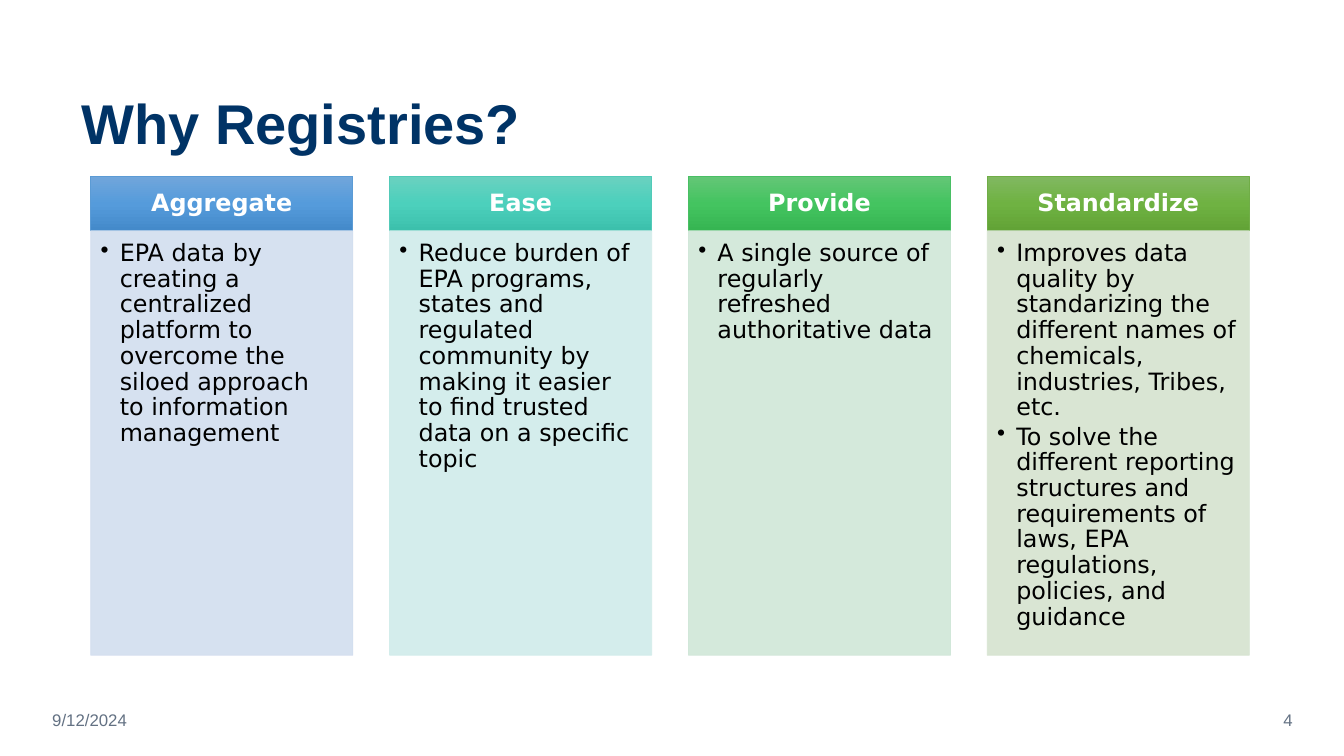
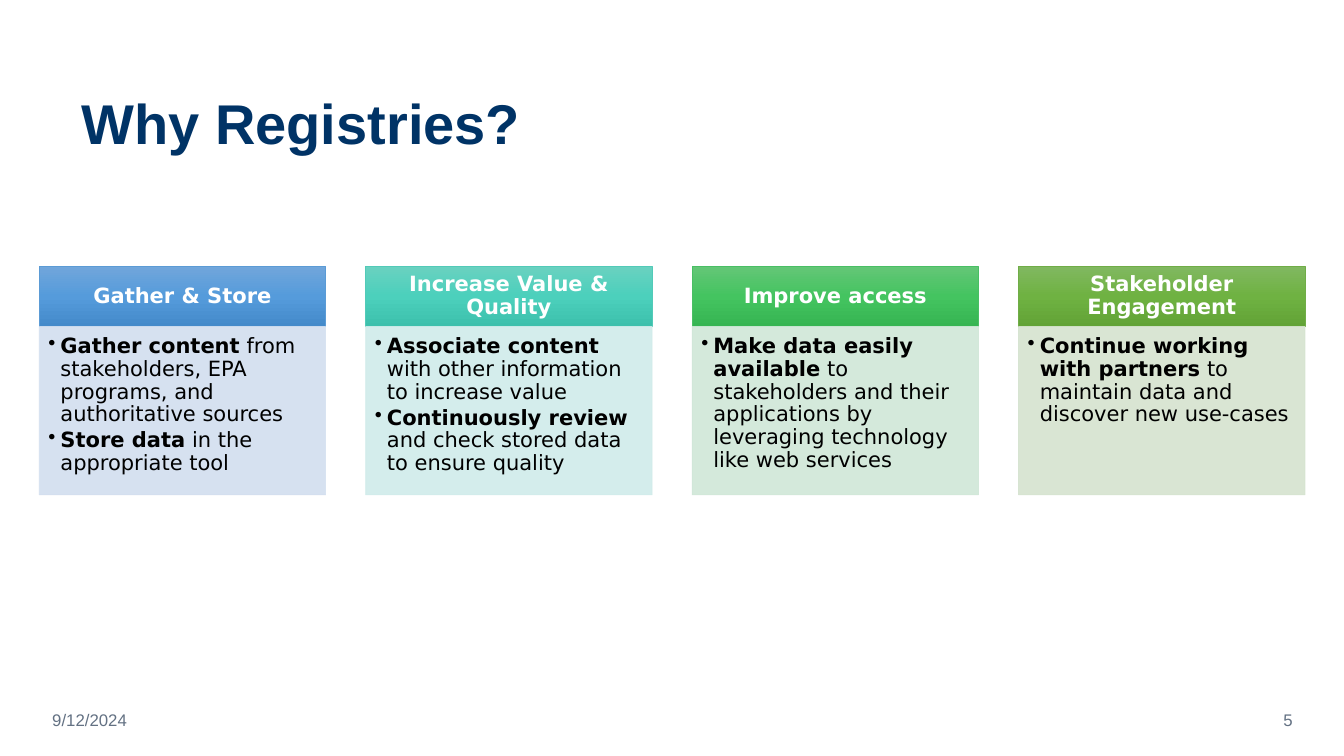
from copy import deepcopy

from lxml.etree import SubElement
from pptx import Presentation
from pptx.dml.color import RGBColor
from pptx.enum.shapes import MSO_SHAPE
from pptx.enum.text import MSO_ANCHOR, PP_ALIGN
from pptx.oxml.ns import qn
from pptx.util import Inches, Pt

WHITE = RGBColor(0xFF, 0xFF, 0xFF)
BLACK = RGBColor(0x00, 0x00, 0x00)
NAVY = RGBColor(0x00, 0x33, 0x66)
SLATE = RGBColor(0x63, 0x71, 0x83)

TITLE_FONT = "Arial"
COLUMN_FONT = "DejaVu Sans"
TITLE = "Why Registries?"
DATE = "9/12/2024"

# Per column: header gradient from top to bottom, header outline, body fill
COLUMN_COLOURS = [
    [RGBColor.from_string(code) for code in codes.split()]
    for codes in (
        "71A6DB 559BDB 448ACA 5B9BD5 D2DEEF",
        "6AD1C0 4CD0BC 3CC0AC 52CAB8 D0ECEA",
        "64C677 44C460 36B552 49BF64 D0E7D8",
        "81B861 6FB242 62A336 70AD47 D5E3CF",
    )
]
BODY_OPACITY = 90
PITCH_TO_WIDTH = 1.14

# Each bullet is a pair: bold lead, plain remainder
SLIDES = [
    {
        "number": 4,
        "left": 0.9, "top": 1.75, "width": 2.6,
        "header_height": 0.54, "body_height": 4.21,
        "size": 17, "indent": 0.19,
        "header_insets": (0.13, 0.08, 0.13, 0.08),
        "body_insets": (0.1, 0.1, 0.13, 0.15),
        "columns": [
            ("Aggregate", [
                ("", "EPA data by creating a centralized platform to overcome "
                     "the siloed approach to information management"),
            ]),
            ("Ease", [
                ("", "Reduce burden of EPA programs, states and regulated community "
                     "by making it easier to find trusted data on a specific topic"),
            ]),
            ("Provide", [
                ("", "A single source of regularly refreshed authoritative data"),
            ]),
            ("Standardize", [
                ("", "Improves data quality by standarizing the different names of "
                     "chemicals, industries, Tribes, etc."),
                ("", "To solve the different reporting structures and requirements of "
                     "laws, EPA regulations, policies, and guidance"),
            ]),
        ],
    },
    {
        "number": 5,
        "left": 0.39, "top": 2.64, "width": 2.84,
        "header_height": 0.6, "body_height": 1.67,
        "size": 15, "indent": 0.12,
        "header_insets": (0.12, 0.07, 0.12, 0.07),
        "body_insets": (0.09, 0.09, 0.12, 0.13),
        "columns": [
            ("Gather & Store", [
                ("Gather content", " from stakeholders, EPA programs, "
                                   "and authoritative sources"),
                ("Store data", " in the appropriate tool"),
            ]),
            ("Increase Value & Quality", [
                ("Associate content", " with other information to increase value"),
                ("Continuously review", " and check stored data to ensure quality"),
            ]),
            ("Improve access", [
                ("Make data easily available",
                 " to stakeholders and their applications by leveraging "
                 "technology like web services"),
            ]),
            ("Stakeholder Engagement", [
                ("Continue working with partners",
                 " to maintain data and discover new use-cases"),
            ]),
        ],
    },
]


def set_values(target, values):
    for name, value in values.items():
        setattr(target, name, value)


def set_frame(shape, anchor, insets=(0.1, 0.05, 0.1, 0.05)):
    sides = ("margin_left", "margin_top", "margin_right", "margin_bottom")
    frame = shape.text_frame
    set_values(frame, {"word_wrap": True, "vertical_anchor": anchor})
    set_values(frame, dict(zip(sides, map(Inches, insets))))
    return frame


def add_run(paragraph, text, font, size, colour, bold=False):
    run = paragraph.add_run()
    run.text = text
    set_values(run.font, {"name": font, "size": Pt(size), "bold": bold})
    run.font.color.rgb = colour


def add_label(slide, box, text, size, colour, anchor=MSO_ANCHOR.MIDDLE,
              align=PP_ALIGN.LEFT, bold=False, **frame_options):
    label = slide.shapes.add_textbox(*map(Inches, box))
    paragraph = set_frame(label, anchor, **frame_options).paragraphs[0]
    set_values(paragraph, {"alignment": align, "line_spacing": 0.9})
    add_run(paragraph, text, TITLE_FONT, size, colour, bold)


def add_rectangle(slide, box, line_colour):
    shape = slide.shapes.add_shape(MSO_SHAPE.RECTANGLE, *map(Inches, box))
    shape.shadow.inherit = False
    shape.line.color.rgb = line_colour
    shape.line.width = Pt(0.5)
    return shape


def fill_gradient(shape, colours):
    """Fill from top to bottom with three evenly spaced colours."""
    shape.fill.gradient()
    shape.fill.gradient_angle = 270
    stop_list = next(shape.element.iter(qn("a:gsLst")))
    stop_list.insert(1, deepcopy(stop_list[0]))
    for stop, position, colour in zip(shape.fill.gradient_stops, (0, 0.5, 1), colours):
        stop.position = position
        stop.color.rgb = colour


def add_header(slide, box, text, colours, layout):
    *gradient, outline, _ = colours
    header = add_rectangle(slide, box, outline)
    fill_gradient(header, gradient)
    frame = set_frame(header, MSO_ANCHOR.MIDDLE, layout["header_insets"])
    paragraph = frame.paragraphs[0]
    set_values(paragraph, {"alignment": PP_ALIGN.CENTER, "line_spacing": 0.9})
    add_run(paragraph, text, COLUMN_FONT, layout["size"], WHITE, bold=True)


def add_bullet(paragraph, indent):
    properties = paragraph._p.get_or_add_pPr()
    properties.set("marL", str(Inches(indent)))
    properties.set("indent", str(-Inches(indent)))
    SubElement(properties, qn("a:buChar"), char="•")


def add_body(slide, box, bullets, colour, layout):
    body = add_rectangle(slide, box, colour)
    body.fill.solid()
    body.fill.fore_color.rgb = colour
    for colour_element in body.element.spPr.iter(qn("a:srgbClr")):
        SubElement(colour_element, qn("a:alpha"), val=str(BODY_OPACITY * 1000))
    frame = set_frame(body, MSO_ANCHOR.TOP, layout["body_insets"])
    size = layout["size"]
    for index, (lead, remainder) in enumerate(bullets):
        paragraph = frame.add_paragraph() if index else frame.paragraphs[0]
        set_values(paragraph, {
            "alignment": PP_ALIGN.LEFT,
            "line_spacing": 0.9,
            "space_after": Pt(0.15 * size),
        })
        add_bullet(paragraph, layout["indent"])
        if lead:
            add_run(paragraph, lead, COLUMN_FONT, size, BLACK, bold=True)
        add_run(paragraph, remainder, COLUMN_FONT, size, BLACK)


def add_columns(slide, layout):
    top, width = layout["top"], layout["width"]
    header_height = layout["header_height"]
    for index, (heading, bullets) in enumerate(layout["columns"]):
        colours = COLUMN_COLOURS[index]
        left = layout["left"] + index * width * PITCH_TO_WIDTH
        add_header(slide, (left, top, width, header_height), heading, colours, layout)
        body_box = (left, top + header_height, width, layout["body_height"])
        add_body(slide, body_box, bullets, colours[-1], layout)


def add_title_and_footer(slide, number):
    add_label(slide, (0.81, 0.15, 11.68, 1.45), TITLE, 40, NAVY,
              anchor=MSO_ANCHOR.BOTTOM, bold=True, insets=(0, 0.05, 0.1, 0.05))
    add_label(slide, (0.42, 6.95, 3, 0.4), DATE, 12, SLATE)
    add_label(slide, (9.92, 6.95, 3, 0.4), str(number), 12, SLATE, align=PP_ALIGN.RIGHT)


def main():
    presentation = Presentation()
    presentation.slide_width = Inches(13.33)
    presentation.slide_height = Inches(7.5)
    for layout in SLIDES:
        slide = presentation.slides.add_slide(presentation.slide_layouts[6])
        add_title_and_footer(slide, layout["number"])
        add_columns(slide, layout)
    presentation.save("out.pptx")


if __name__ == "__main__":
    main()
